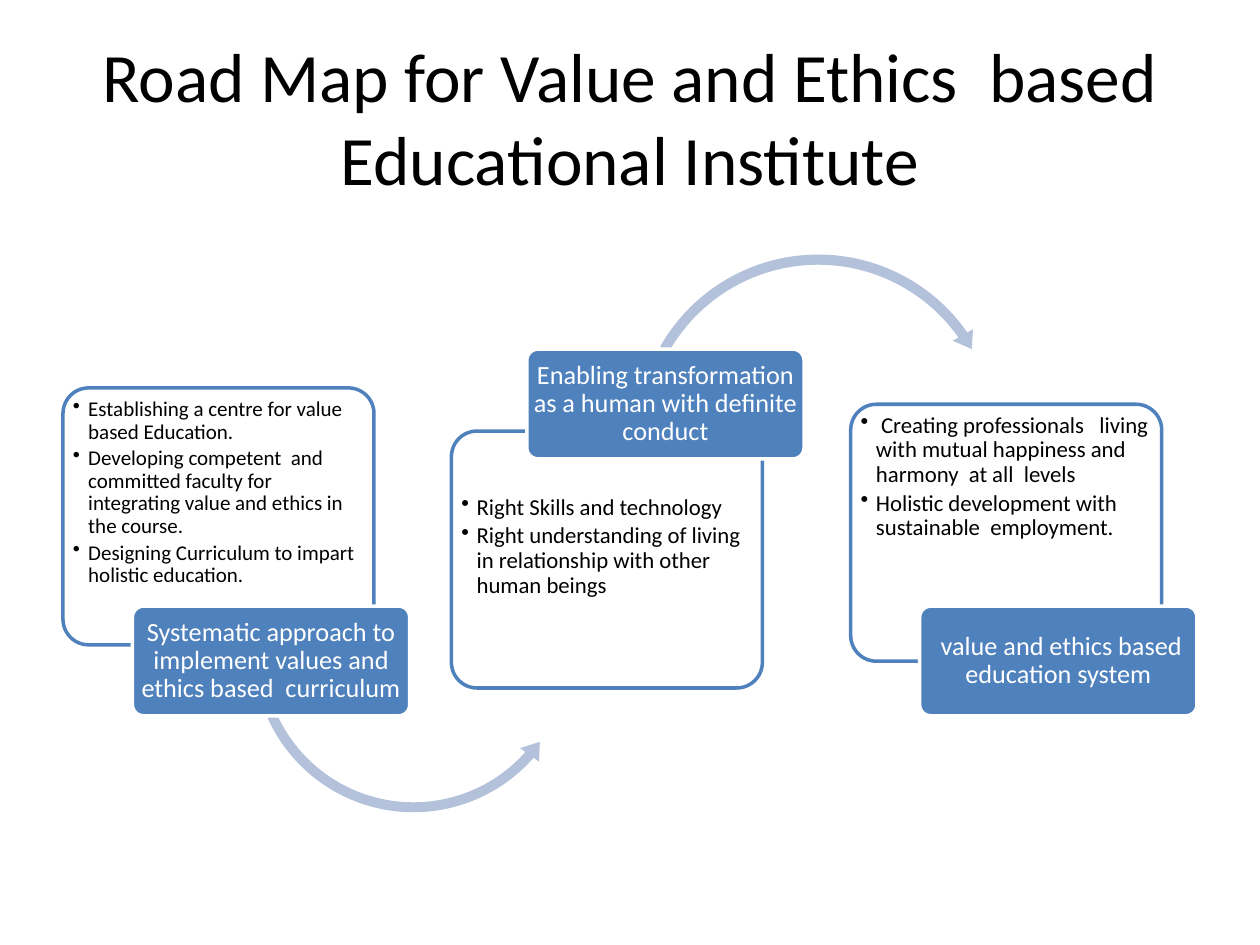
from lxml import etree
from pptx import Presentation
from pptx import util as u
from pptx.dml.color import RGBColor
from pptx.enum import shapes, text
from pptx.oxml.ns import qn

BLACK = RGBColor(0x00, 0x00, 0x00)
WHITE = RGBColor(0xFF, 0xFF, 0xFF)
BLUE = RGBColor(0x4F, 0x81, 0xBD)
PALE_BLUE = RGBColor(0xB3, 0xC1, 0xDB)

PANEL_WIDTH, PANEL_HEIGHT = 6.27, 5.18
TAG_WIDTH, TAG_HEIGHT = 5.59, 2.21
CORNER = 0.1


class RoadMap:
    font = "Calibri"
    line_width = u.Pt(2)
    line_spacing = 0.9
    bullet_indent = u.Cm(0.31)

    def __init__(self, slide):
        self.slide = slide

    def shape(self, kind, area, fill, line=None, adjustments=()):
        shape = self.slide.shapes.add_shape(kind, *map(u.Cm, area))
        shape.shadow.inherit = False
        shape.fill.solid()
        shape.fill.fore_color.rgb = fill
        if line is None:
            shape.line.fill.background()
        else:
            shape.line.color.rgb = line
            shape.line.width = self.line_width
        for index, value in enumerate(adjustments):
            shape.adjustments[index] = value
        return shape

    def text(self, area, lines, size, color, inset, centred=True, spacing=None, after=0):
        box = self.slide.shapes.add_textbox(*map(u.Cm, area))
        frame = box.text_frame
        frame.word_wrap = True
        frame.vertical_anchor = text.MSO_ANCHOR.MIDDLE if centred else text.MSO_ANCHOR.TOP
        frame.margin_left = frame.margin_right = u.Cm(inset[0])
        frame.margin_top = frame.margin_bottom = u.Cm(inset[1])
        for index, line in enumerate(lines):
            para = frame.add_paragraph() if index else frame.paragraphs[0]
            para.alignment = text.PP_ALIGN.CENTER if centred else text.PP_ALIGN.LEFT
            para.line_spacing = spacing
            para.space_after = u.Pt(after)
            span = para.add_run()
            span.text = line
            span.font.name = self.font
            span.font.size = u.Pt(size)
            span.font.color.rgb = color
        return frame

    def title(self, line):
        self.text((1.27, 0.76, 22.86, 3.18), [line], 39.6, BLACK, (0.25, 0.13))

    def panel(self, left, top, text_top, lines, size):
        panel = self.shape(shapes.MSO_SHAPE.ROUNDED_RECTANGLE,
                           (left, top, PANEL_WIDTH, PANEL_HEIGHT), WHITE, BLUE, [CORNER])
        fill_color = panel.fill._xPr.find(qn("a:solidFill"))[0]
        etree.SubElement(fill_color, qn("a:alpha"), val="90000")
        frame = self.text((left + 0.12, text_top, 6.05, 3.84), lines, size, BLACK,
                          (0.08, 0.08), False, self.line_spacing, 0.18 * size)
        for para in frame.paragraphs:
            para.level = 1
            properties = para._p.get_or_add_pPr()
            properties.set("marL", str(self.bullet_indent))
            properties.set("indent", str(-self.bullet_indent))
            etree.SubElement(properties, qn("a:buChar"), char="•")

    def arrow(self, kind, left, top, side, adjustments):
        self.shape(kind, (left, top, side, side), PALE_BLUE, adjustments=adjustments)

    def tag(self, left, top, line):
        self.shape(shapes.MSO_SHAPE.ROUNDED_RECTANGLE,
                   (left, top, TAG_WIDTH, TAG_HEIGHT), BLUE, WHITE, [CORNER])
        self.text((left + 0.06, top + 0.06, TAG_WIDTH - 0.12, TAG_HEIGHT - 0.12),
                  [line], 15, WHITE, (0.08, 0.05), spacing=self.line_spacing)


STAGES = [
    {
        "panel": (1.27, 7.82, 7.95, [
            "Establishing a centre for value based Education.",
            "Developing competent  and committed faculty for integrating value and ethics in the course.",
            "Designing Curriculum to impart holistic education.",
        ], 12),
        "arrow": (shapes.MSO_SHAPE.LEFT_CIRCULAR_ARROW, 4.98, 9.8, 6.71,
                  (0.03, 3.693, 24.842, 93.639, 0.035)),
        "tag": (2.67, 12.22, "Systematic approach to implement values and ethics based  curriculum"),
    },
    {
        "panel": (9.1, 8.69, 9.91, [
            "Right Skills and technology",
            "Right understanding of living in relationship with other human beings",
        ], 13),
        "arrow": (shapes.MSO_SHAPE.CIRCULAR_ARROW, 12.7, 5.0, 7.59,
                  (0.027, 3.23, 195.015, 125.755, 0.031)),
        "tag": (10.62, 7.04, "Enabling transformation as a human with definite conduct"),
    },
    {
        "panel": (17.15, 8.15, 8.26, [
            " Creating professionals   living with mutual happiness and harmony  at all  levels",
            "Holistic development with sustainable  employment.",
        ], 13),
        "tag": (18.54, 12.22, " value and ethics based education system"),
    },
]


def main():
    deck = Presentation()
    deck.slide_width, deck.slide_height = u.Cm(25.4), u.Cm(19.05)
    page = RoadMap(deck.slides.add_slide(deck.slide_layouts[6]))
    page.title("Road Map for Value and Ethics  based Educational Institute")
    for stage in STAGES:
        page.panel(*stage["panel"])
        if "arrow" in stage:
            page.arrow(*stage["arrow"])
        page.tag(*stage["tag"])
    deck.save("out.pptx")


if __name__ == "__main__":
    main()
